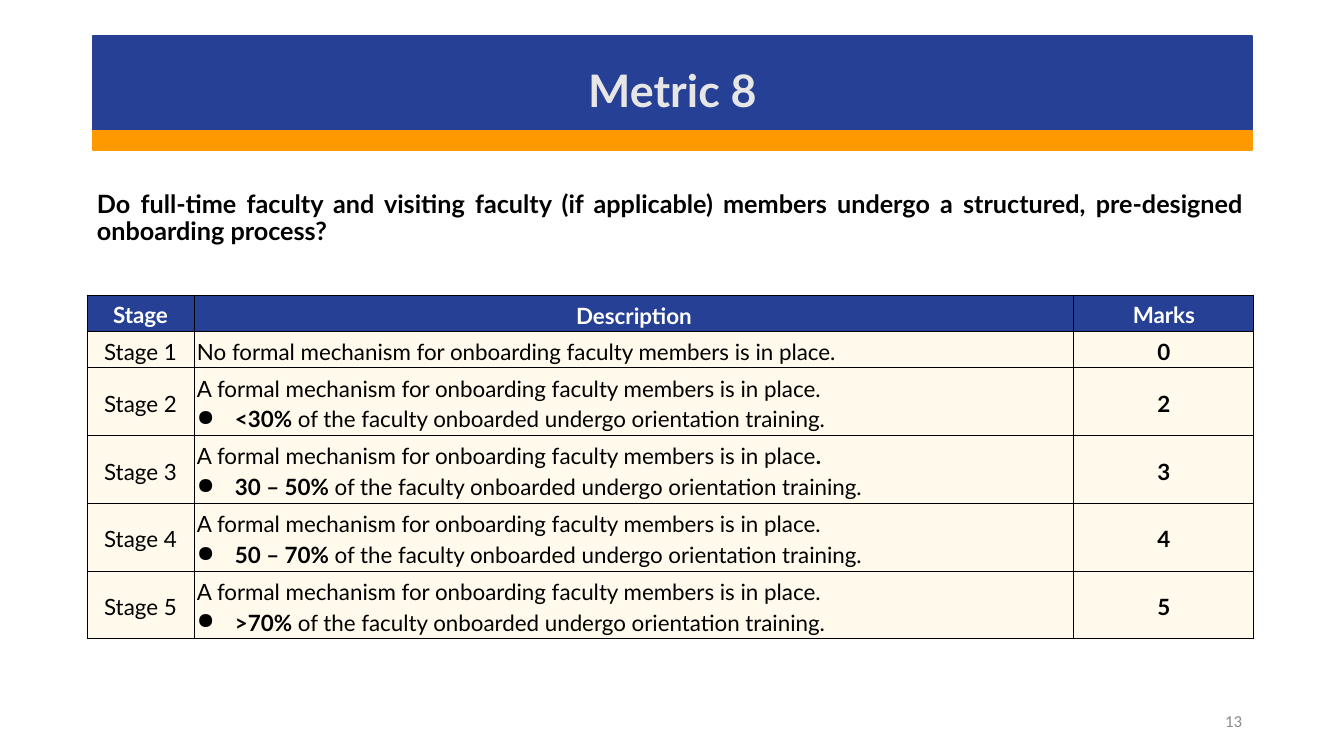
"""Build the Metric 8 slide: a title band, a question and a table of stages and marks."""
import lxml.etree
import pptx
import pptx.dml.color
import pptx.enum.shapes
import pptx.enum.text
import pptx.oxml.ns
import pptx.util
from dataclasses import dataclass

ALIGN = pptx.enum.text.PP_ALIGN
ANCHOR = pptx.enum.text.MSO_ANCHOR
qn = pptx.oxml.ns.qn


@dataclass(frozen=True)
class Theme:
    """Colours, fonts and type sizes of the slide."""
    blue: str = "254094"
    orange: str = "FF9900"
    cream: str = "FFFAEB"
    black: str = "000000"
    white: str = "FFFFFF"
    pale: str = "E7E6E6"
    grey: str = "8C8C8C"
    font: str = "Lato"
    number_font: str = "Calibri"
    title: int = 32
    question: int = 18
    cell: int = 16
    number: int = 12
    border: float = 0.75


T = Theme()
QUESTION = ("Do full-time faculty and visiting faculty (if applicable) members undergo "
            "a structured, pre-designed onboarding process?")
FORMAL = "A formal mechanism for onboarding faculty members is in place"
TRAINING = " of the faculty onboarded undergo orientation training."
HEADERS = ["Stage", "Description", "Marks"]
STAGES = [
    ([("No formal mechanism for onboarding faculty members is in place.", False)], None, 0),
    ([(FORMAL + ".", False)], "<30%", 2),
    ([(FORMAL, False), (".", True)], "30 – 50%", 3),
    ([(FORMAL + ".", False)], "50 – 70%", 4),
    ([(FORMAL + ".", False)], ">70%", 5),
]
COLUMNS = [107, 880, 180]
ROW, TALL_ROW = 36, 67
BULLET_INDENT = 38


def px(n):
    """Turn pixels into EMU."""
    return pptx.util.Emu(round(n * 914400 / 100.8))


def rgb(value):
    """Turn a hex string into a colour."""
    return pptx.dml.color.RGBColor.from_string(value)


def apply(obj, values):
    """Set attributes from a dict of format values."""
    for name, value in values.items():
        setattr(obj, name, value)


def write(p, runs, size, color, align, spacing=None, font=T.font):
    """Fill a paragraph with (text, bold) runs."""
    apply(p, {"alignment": align, "line_spacing": spacing})
    for text, bold in runs:
        r = p.add_run()
        r.text = text
        apply(r.font, {"name": font, "size": pptx.util.Pt(size), "bold": bold})
        r.font.color.rgb = rgb(color)


def add_band(s, box, color):
    """Add a plain filled rectangle."""
    sp = s.shapes.add_shape(pptx.enum.shapes.MSO_SHAPE.RECTANGLE, *map(px, box))
    sp.shadow.inherit = False
    sp.fill.solid()
    sp.fill.fore_color.rgb = rgb(color)
    sp.line.color.rgb = rgb(color)
    sp.line.width = pptx.util.Pt(1)


def add_text(s, box, text, anchor, bold=True, **style):
    """Add a text box with one paragraph."""
    tf = s.shapes.add_textbox(*map(px, box)).text_frame
    apply(tf, {"word_wrap": True, "vertical_anchor": anchor})
    write(tf.paragraphs[0], [(text, bold)], **style)


def add_bullet(p):
    """Give a paragraph a hanging round bullet."""
    pPr = p._p.get_or_add_pPr()
    indent = px(BULLET_INDENT)
    pPr.set("marL", str(indent))
    pPr.set("indent", str(-indent))
    lxml.etree.SubElement(pPr, qn("a:buChar")).set("char", "●")


def add_borders(cell):
    """Draw thin lines on the four sides of a cell."""
    tcPr = cell._tc.get_or_add_tcPr()
    for side in ("a:lnL", "a:lnR", "a:lnT", "a:lnB"):
        ln = lxml.etree.SubElement(tcPr, qn(side))
        ln.set("w", str(pptx.util.Pt(T.border)))
        fill = lxml.etree.SubElement(ln, qn("a:solidFill"))
        lxml.etree.SubElement(fill, qn("a:srgbClr")).set("val", T.black)


def fill_cell(cell, paragraphs, fill, color, align, anchor, inset):
    """Format a cell and write its paragraphs, bulleting all after the first."""
    margins = {f"margin_{side}": px(inset) for side in ("left", "right", "top", "bottom")}
    apply(cell, {"vertical_anchor": anchor, **margins})
    add_borders(cell)
    cell.fill.solid()
    cell.fill.fore_color.rgb = rgb(fill)
    tf = cell.text_frame
    for i, runs in enumerate(paragraphs):
        p = tf.add_paragraph() if i else tf.paragraphs[0]
        if i:
            add_bullet(p)
        write(p, runs, T.cell, color, align, 1.15)


def add_stage_table(s, left, top):
    """Add the table of stages, descriptions and marks."""
    heights = [ROW] + [TALL_ROW if share else ROW for _, share, _ in STAGES]
    box = (left, top, sum(COLUMNS), sum(heights))
    table = s.shapes.add_table(len(heights), len(COLUMNS), *map(px, box)).table
    for column, width in zip(table.columns, COLUMNS):
        column.width = px(width)
    for row, height in zip(table.rows, heights):
        row.height = px(height)

    rows = [[[[(name, True)]] for name in HEADERS]]
    for n, (opening, share, marks) in enumerate(STAGES, 1):
        description = [opening]
        if share:
            description.append([(share, True), (TRAINING, False)])
        rows.append([[[(f"Stage {n}", False)]], description, [[(str(marks), True)]]])

    for i, row in enumerate(rows):
        fill, color = (T.cream, T.black) if i else (T.blue, T.white)
        for j, paragraphs in enumerate(row):
            align = ALIGN.LEFT if i and j == 1 else ALIGN.CENTER
            anchor = ANCHOR.BOTTOM if j == 1 else ANCHOR.MIDDLE
            inset = 3 if i and j < 2 else 2
            fill_cell(table.cell(i, j), paragraphs, fill, color, align, anchor, inset)


def main():
    """Build and save the slide."""
    prs = pptx.Presentation()
    apply(prs, {"slide_width": px(1344), "slide_height": px(756)})
    s = prs.slides.add_slide(prs.slide_layouts[6])
    add_band(s, (93, 36, 1159, 94), T.blue)
    add_band(s, (93, 131, 1159, 19), T.orange)
    add_text(s, (93, 38, 1159, 84), "Metric 8", ANCHOR.BOTTOM,
             size=T.title, color=T.pale, align=ALIGN.CENTER, spacing=0.9)
    add_text(s, (87, 187, 1166, 66), QUESTION, ANCHOR.TOP,
             size=T.question, color=T.black, align=ALIGN.JUSTIFY, spacing=0.9)
    add_stage_table(s, 87, 295)
    add_text(s, (950, 701, 302, 40), "13", ANCHOR.MIDDLE, bold=False, size=T.number,
             color=T.grey, align=ALIGN.RIGHT, font=T.number_font)
    prs.save("out.pptx")


if __name__ == "__main__":
    main()
